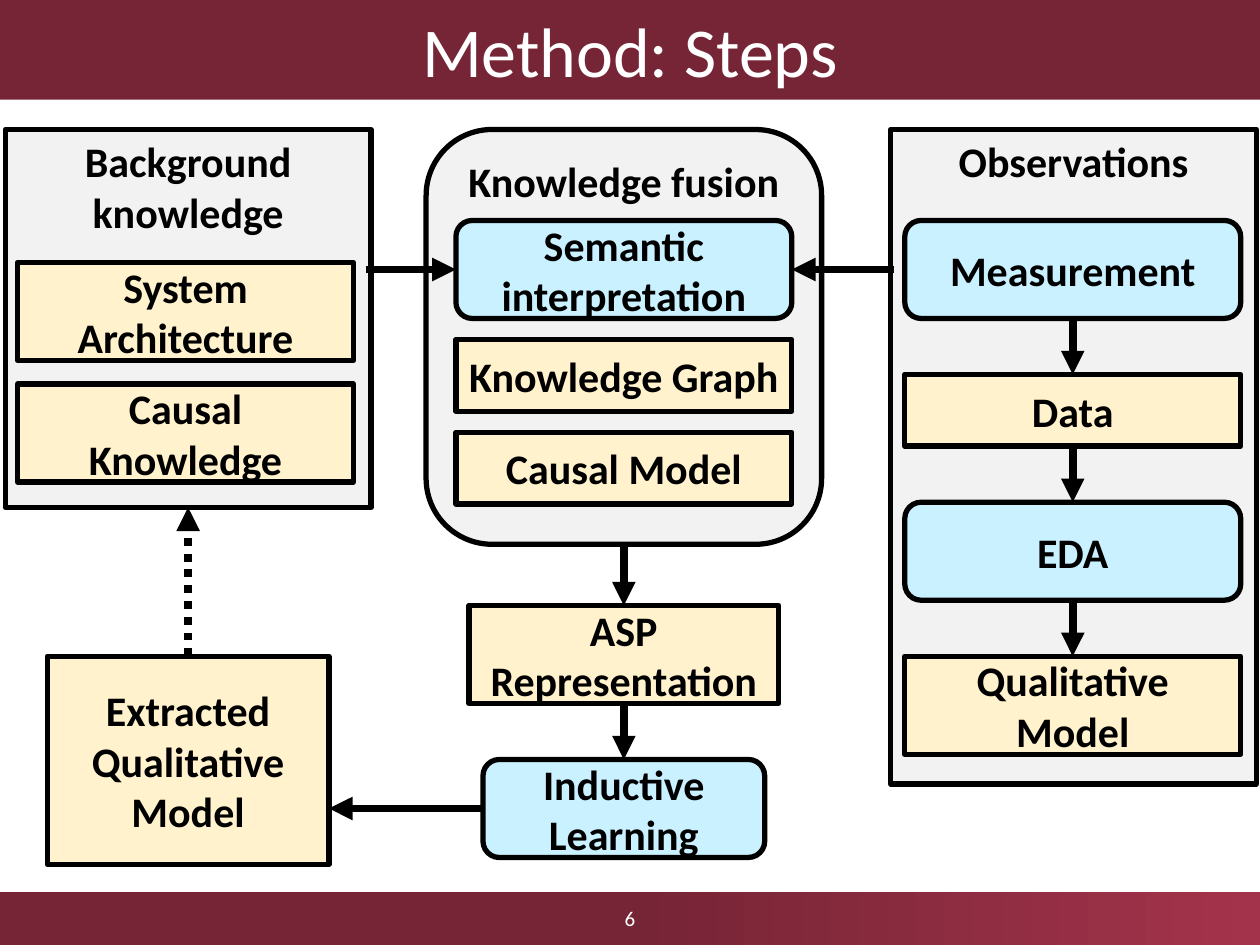
"""Build the "Method: Steps" flow diagram slide."""
from dataclasses import dataclass

from lxml import etree
from pptx import Presentation
from pptx.dml.color import RGBColor
from pptx.enum.dml import MSO_LINE
from pptx.enum.shapes import MSO_CONNECTOR, MSO_SHAPE
from pptx.enum.text import MSO_ANCHOR, PP_ALIGN
from pptx.oxml.ns import qn
from pptx.util import Pt

RECTANGLE = MSO_SHAPE.RECTANGLE
ROUNDED = MSO_SHAPE.ROUNDED_RECTANGLE
PROCESS = MSO_SHAPE.FLOWCHART_ALTERNATE_PROCESS
STRAIGHT = MSO_CONNECTOR.STRAIGHT
DOTTED = MSO_LINE.ROUND_DOT
TOP, MIDDLE = MSO_ANCHOR.TOP, MSO_ANCHOR.MIDDLE
CENTER = PP_ALIGN.CENTER
TITLE_ONLY = 5
TOP_SIDE, LEFT_SIDE, BOTTOM_SIDE, RIGHT_SIDE = range(4)


@dataclass(frozen=True)
class Theme:
    font: str = "Calibri"
    maroon: RGBColor = RGBColor.from_string("762536")
    crimson: RGBColor = RGBColor.from_string("A3334B")
    panel: RGBColor = RGBColor.from_string("F2F2F2")
    artifact: RGBColor = RGBColor.from_string("FFF2CC")
    activity: RGBColor = RGBColor.from_string("C9F1FF")
    ink: RGBColor = RGBColor.from_string("000000")
    white: RGBColor = RGBColor.from_string("FFFFFF")
    title_size: int = 40
    box_size: int = 24
    number_size: int = 12


theme = Theme()


def write_text(shape, text, size, color, bold=False, anchor=MIDDLE):
    frame = shape.text_frame
    frame.word_wrap = True
    frame.vertical_anchor = anchor
    frame.text = text
    font_format = {"name": theme.font, "size": Pt(size), "bold": bold}
    for paragraph in frame.paragraphs:
        paragraph.alignment = CENTER
        for run in paragraph.runs:
            for attribute, value in font_format.items():
                setattr(run.font, attribute, value)
            run.font.color.rgb = color


def add_arrow(start, end):
    connector = slide.shapes.add_connector(STRAIGHT, *(Pt(value) for value in start + end))
    connector.line.width = Pt(4.5)
    connector.line.color.rgb = theme.ink
    etree.SubElement(connector.line._get_or_add_ln(), qn("a:tailEnd"), type="triangle")
    etree.SubElement(connector._element.spPr, qn("a:effectLst"))
    return connector


presentation = Presentation()
presentation.slide_width = Pt(720)
presentation.slide_height = Pt(540)
slide = presentation.slides.add_slide(presentation.slide_layouts[TITLE_ONLY])

title = slide.shapes.title
title_place = {"left": Pt(0), "top": Pt(0), "width": Pt(720), "height": Pt(57)}
for attribute, value in title_place.items():
    setattr(title, attribute, value)
title.fill.solid()
title.fill.fore_color.rgb = theme.maroon
write_text(title, "Method: Steps", theme.title_size, theme.white)

footer = slide.shapes.add_shape(RECTANGLE, Pt(0), Pt(510), Pt(720), Pt(30))
footer.shadow.inherit = False
footer.line.fill.background()
footer.fill.gradient()
footer.fill.gradient_angle = 0
for stop, position, color in zip(
    footer.fill.gradient_stops, (0.5, 1), (theme.maroon, theme.crimson)
):
    stop.position = position
    stop.color.rgb = color

page_number = slide.shapes.add_textbox(Pt(279), Pt(510), Pt(162), Pt(29))
write_text(page_number, "6", theme.number_size, theme.white)

boxes = [
    ("background", "Background\vknowledge", RECTANGLE, theme.panel, 3, 74, 209, 216),
    ("fusion", "Knowledge fusion", ROUNDED, theme.panel, 243.5, 74, 226, 237),
    ("observations", "Observations", RECTANGLE, theme.panel, 509, 74, 209, 374),
    ("extracted", "Extracted\nQualitative\nModel", RECTANGLE, theme.artifact, 27, 375, 161, 119),
    ("asp", "ASP\vRepresentation", RECTANGLE, theme.artifact, 268, 346, 177, 56),
    ("learning", "Inductive\vLearning", ROUNDED, theme.activity, 276, 434, 161, 56),
]

columns = [
    (10, 150, 13.5, [
        ("architecture", "System\vArchitecture", RECTANGLE, 56),
        ("causal", "Causal\nKnowledge", RECTANGLE, 56),
    ]),
    (260.5, 126, 12, [
        ("semantic", "Semantic\vinterpretation", PROCESS, 56),
        ("graph", "Knowledge Graph", RECTANGLE, 41),
        ("model", "Causal Model", RECTANGLE, 41),
    ]),
    (517, 126, 32, [
        ("measurement", "Measurement", PROCESS, 56),
        ("data", "Data", RECTANGLE, 41),
        ("eda", "EDA", PROCESS, 56),
        ("qualitative", "Qualitative\vModel", RECTANGLE, 56),
    ]),
]
for left, top, gap, cards in columns:
    for name, text, outline, height in cards:
        color = theme.activity if outline == PROCESS else theme.artifact
        boxes.append((name, text, outline, color, left, top, 192, height))
        top += height + gap

shapes = {}
for name, text, outline, color, *place in boxes:
    shape = slide.shapes.add_shape(outline, *(Pt(value) for value in place))
    shape.shadow.inherit = False
    shape.fill.solid()
    shape.fill.fore_color.rgb = color
    shape.line.color.rgb = theme.ink
    shape.line.width = Pt(3)
    anchor = TOP if color == theme.panel else MIDDLE
    write_text(shape, text, theme.box_size, theme.ink, True, anchor)
    shapes[name] = shape

for source, target in [
    ("measurement", "data"),
    ("data", "eda"),
    ("eda", "qualitative"),
    ("fusion", "asp"),
    ("asp", "learning"),
]:
    arrow = add_arrow((0, 0), (0, 0))
    arrow.begin_connect(shapes[source], BOTTOM_SIDE)
    arrow.end_connect(shapes[target], TOP_SIDE)

feedback = add_arrow((107.5, 375), (107.5, 290))
feedback.line.dash_style = DOTTED
feedback.begin_connect(shapes["extracted"], TOP_SIDE)
feedback.end_connect(shapes["background"], BOTTOM_SIDE)

for start_x, end_x, side in [(209, 260.5, LEFT_SIDE), (511, 452.5, RIGHT_SIDE)]:
    add_arrow((start_x, 154), (end_x, 154)).end_connect(shapes["semantic"], side)

add_arrow((276, 462), (188, 462)).begin_connect(shapes["learning"], LEFT_SIDE)

presentation.save("out.pptx")
